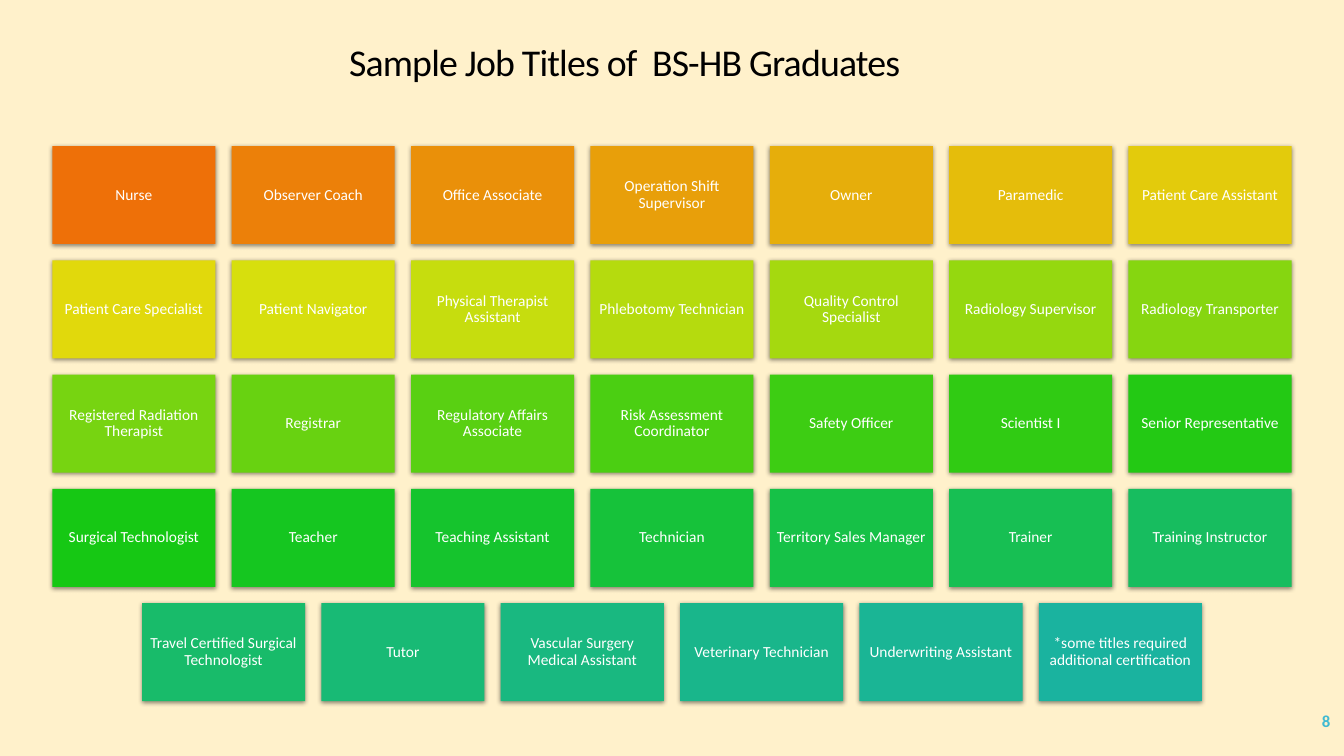
import colorsys
import dataclasses
import typing

import pptx
import pptx.dml.color
import pptx.enum.shapes
import pptx.enum.text
import pptx.oxml
import pptx.oxml.ns
import pptx.util

Cm = pptx.util.Cm
Pt = pptx.util.Pt
RGB = pptx.dml.color.RGBColor
ALIGN = pptx.enum.text.PP_ALIGN


@dataclasses.dataclass(frozen=True)
class Theme:
    font: str = "Calibri"
    back: str = "FFF1CB"
    ink: str = "000000"
    light: str = "FFFFFF"
    teal: str = "40BAD2"
    first: str = "EE7008"
    last: str = "1AB39F"
    head: float = 27
    small: float = 12
    label: float = 11


@dataclasses.dataclass(frozen=True)
class Box:
    left: float
    top: float
    width: float
    height: float


@dataclasses.dataclass(frozen=True)
class Tile:
    text: str
    fill: str
    box: Box


THEME = Theme()
WIDTH, HEIGHT = 33.87, 19.05

# Tile grid in centimetres
TILE_W, TILE_H, GAP, TOP = 4.11, 2.47, 0.41, 3.68

ROWS = [
    ["Nurse", "Observer Coach", "Office Associate", "Operation Shift Supervisor",
     "Owner", "Paramedic", "Patient Care Assistant"],
    ["Patient Care Specialist", "Patient Navigator", "Physical Therapist Assistant",
     "Phlebotomy Technician", "Quality Control Specialist", "Radiology Supervisor",
     "Radiology Transporter"],
    ["Registered Radiation Therapist", "Registrar", "Regulatory Affairs Associate",
     "Risk Assessment Coordinator", "Safety Officer", "Scientist I",
     "Senior Representative"],
    ["Surgical Technologist", "Teacher", "Teaching Assistant", "Technician",
     "Territory Sales Manager", "Trainer", "Training Instructor"],
    ["Travel Certified Surgical Technologist", "Tutor",
     "Vascular Surgery Medical Assistant", "Veterinary Technician",
     "Underwriting Assistant", "*some titles required additional certification"],
]

SHADOW = (
    f'<a:outerShdw {pptx.oxml.ns.nsdecls("a")} blurRad="{Pt(3.5)}" dist="{Pt(1.1)}" '
    'dir="5400000" algn="ctr" rotWithShape="0">'
    '<a:srgbClr val="000000"><a:alpha val="45000"/></a:srgbClr></a:outerShdw>'
)


def assign(item: typing.Any, form: dict[str, typing.Any]) -> None:
    for name, value in form.items():
        setattr(item, name, value)


def place(shape: typing.Any, box: Box) -> None:
    assign(shape, {k: Cm(v) for k, v in dataclasses.asdict(box).items()})


def write(shape: typing.Any, text: str, size: float, tint: str,
          para: dict[str, typing.Any], bold: bool = False,
          inset: float | None = None) -> typing.Any:
    """Fill a shape with one styled paragraph and return its run."""
    frame = shape.text_frame
    assign(frame, {"word_wrap": True,
                   "auto_size": pptx.enum.text.MSO_AUTO_SIZE.NONE,
                   "vertical_anchor": pptx.enum.text.MSO_ANCHOR.MIDDLE})
    if inset is not None:
        sides = ("left", "top", "right", "bottom")
        assign(frame, {f"margin_{side}": Cm(inset) for side in sides})
    line = frame.paragraphs[0]
    assign(line, para)
    run = line.add_run()
    run.text = text
    assign(run.font, {"name": THEME.font, "size": Pt(size), "bold": bold})
    run.font.color.rgb = RGB.from_string(tint)
    return run


def blend(part: float) -> str:
    """Mix the first and last tile colours along the hue circle."""
    ends = [colorsys.rgb_to_hls(*(v / 255 for v in RGB.from_string(c)))
            for c in (THEME.first, THEME.last)]
    mix = [a + (b - a) * part for a, b in zip(*ends)]
    return str(RGB(*(round(v * 255) for v in colorsys.hls_to_rgb(*mix))))


def plan() -> list[Tile]:
    """Centre each row and run the colours through all tiles."""
    tiles: list[Tile] = []
    total = sum(len(row) for row in ROWS)
    for r, row in enumerate(ROWS):
        left = (WIDTH - len(row) * (TILE_W + GAP) + GAP) / 2
        for c, text in enumerate(row):
            box = Box(left + c * (TILE_W + GAP), TOP + r * (TILE_H + GAP),
                      TILE_W, TILE_H)
            tiles.append(Tile(text, blend(len(tiles) / (total - 1)), box))
    return tiles


def draw(slide: typing.Any, tile: Tile) -> None:
    shape = slide.shapes.add_shape(pptx.enum.shapes.MSO_SHAPE.RECTANGLE, 0, 0, 0, 0)
    place(shape, tile.box)
    shape.fill.solid()
    shape.fill.fore_color.rgb = RGB.from_string(tile.fill)
    shape.line.fill.background()
    shape.shadow.inherit = False
    effects = shape._element.spPr.find(pptx.oxml.ns.qn("a:effectLst"))
    effects.append(pptx.oxml.parse_xml(SHADOW))
    write(shape, tile.text, THEME.label, THEME.light,
          {"alignment": ALIGN.CENTER, "line_spacing": 0.9}, inset=0.12)


def main() -> None:
    deck = pptx.Presentation()
    assign(deck, {"slide_width": Cm(WIDTH), "slide_height": Cm(HEIGHT)})
    slide = deck.slides.add_slide(deck.slide_layouts.get_by_name("Title Only"))
    slide.background.fill.solid()
    slide.background.fill.fore_color.rgb = RGB.from_string(THEME.back)

    # Title
    title = slide.shapes.title
    place(title, Box(0, 1.02, 31.47, 1.19))
    run = write(title, "Sample Job Titles of  BS-HB Graduates", THEME.head, THEME.ink,
                {"alignment": ALIGN.CENTER, "line_spacing": 0.9})
    run.font._element.set("spc", "-60")

    # Job tiles
    for tile in plan():
        draw(slide, tile)

    # Page number
    page = slide.shapes.add_textbox(0, 0, 0, 0)
    place(page, Box(29.54, 17.65, 4.24, 1.02))
    write(page, "8", THEME.small, THEME.teal,
          {"alignment": ALIGN.RIGHT, "space_after": Pt(6)}, bold=True)

    deck.save("out.pptx")


if __name__ == "__main__":
    main()
